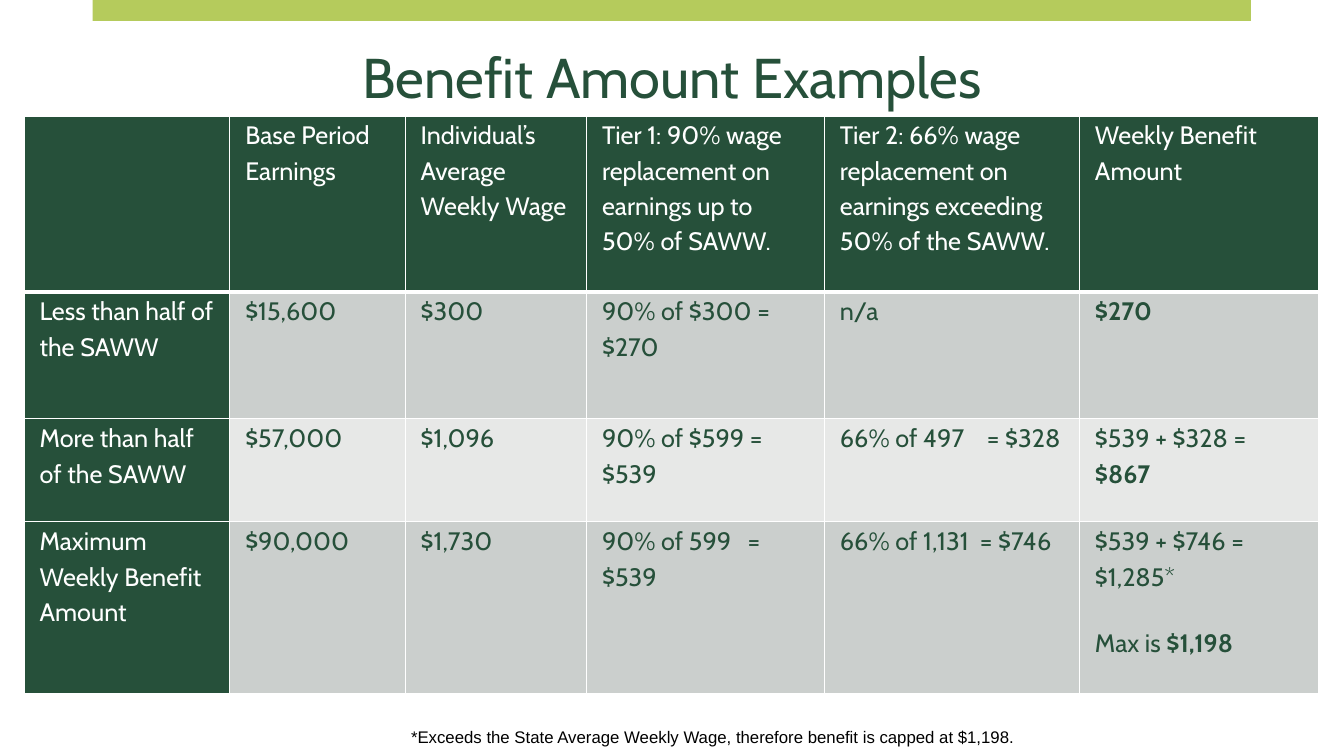
from lxml import etree
from pptx import Presentation
from pptx.dml.color import RGBColor
from pptx.enum import shapes, text
from pptx.oxml import ns
from pptx.util import Pt

GREEN = RGBColor(0x26, 0x50, 0x3A)
LIME = RGBColor(0xB5, 0xCB, 0x5C)
DARK_BAND = RGBColor(0xCB, 0xCF, 0xCD)
LIGHT_BAND = RGBColor(0xE7, 0xE8, 0xE7)
WHITE = RGBColor(0xFF, 0xFF, 0xFF)
BLACK = RGBColor(0, 0, 0)

COLUMN_WIDTHS = [146.9, 125.3, 129.6, 169.9, 182.2, 170.6]
ROW_HEIGHTS = [125.7, 90.7, 73.6, 122.9]
EQUALS_STOPS = {(2, 4): 105, (3, 3): 104, (3, 4): 100}
BENEFITS = [
    ["", "Base Period Earnings", "Individual’s Average Weekly Wage",
     "Tier 1: 90% wage replacement on earnings up to 50% of SAWW.",
     "Tier 2: 66% wage replacement on earnings exceeding 50% of the SAWW.",
     "Weekly Benefit Amount"],
    ["Less than half of the SAWW", "$15,600", "$300", "90% of $300 = $270",
     "n/a", "**$270"],
    ["More than half of the SAWW", "$57,000", "$1,096", "90% of $599 = $539",
     "66% of 497\t= $328", "$539 + $328 = **$867"],
    ["Maximum Weekly Benefit Amount", "$90,000", "$1,730",
     "90% of 599\t= $539", "66% of 1,131\t= $746",
     "$539 + $746 = $1,285*\nMax is **$1,198"],
]


def apply(target, values):
    """Set every attribute in a dict of format values."""
    for name, value in values.items():
        setattr(target, name, value)


def write_spans(para, content, color, font):
    """Write text in which a double asterisk switches to bold."""
    for index, piece in enumerate(content.split("**")):
        if piece:
            span = para.add_run()
            span.text = piece
            apply(span.font, {"bold": index == 1, **font})
            span.font.color.rgb = color


def add_text(page, bounds, content, color, font, frame_format, para_format):
    """Add a one-paragraph text box."""
    frame = page.shapes.add_textbox(*map(Pt, bounds)).text_frame
    apply(frame, {"word_wrap": True, **frame_format})
    para = frame.paragraphs[0]
    apply(para, para_format)
    write_spans(para, content, color, font)


def add_bar(page, bounds, color):
    """Add a plain filled bar."""
    bar = page.shapes.add_shape(shapes.MSO_SHAPE.RECTANGLE, *map(Pt, bounds))
    bar.shadow.inherit = False
    bar.fill.solid()
    bar.fill.fore_color.rgb = color
    bar.line.fill.background()


def add_tab_stop(para, position):
    """Give a paragraph one left tab stop."""
    stops = etree.SubElement(para._p.get_or_add_pPr(), ns.qn("a:tabLst"))
    etree.SubElement(stops, ns.qn("a:tab"), pos=str(Pt(position)), algn="l")


def set_borders(cell, widths):
    """Draw white borders given as left, right, top and bottom widths."""
    properties = cell._tc.get_or_add_tcPr()
    for index, (side, width) in enumerate(zip("LRTB", widths)):
        line = etree.Element(ns.qn(f"a:ln{side}"), w=str(Pt(width)))
        fill = etree.SubElement(line, ns.qn("a:solidFill"))
        etree.SubElement(fill, ns.qn("a:srgbClr"), val=str(WHITE))
        properties.insert(index, line)


def fill_cell(cell, row, column, content):
    """Fill, border and write one table cell."""
    heading = row == 0 or column == 0
    band = DARK_BAND if row % 2 else LIGHT_BAND
    apply(cell, {"margin_left": Pt(11), "margin_right": Pt(11),
                 "margin_top": 0, "margin_bottom": 0})
    cell.fill.solid()
    cell.fill.fore_color.rgb = GREEN if heading else band
    set_borders(cell, [1, 1, 3 if row == 1 else 1, 3 if row == 0 else 1])
    for index, line in enumerate(content.split("\n")):
        frame = cell.text_frame
        para = frame.add_paragraph() if index else frame.paragraphs[0]
        para.line_spacing = 1.15
        if index:
            para.space_before = Pt(22)
        if (row, column) in EQUALS_STOPS:
            add_tab_stop(para, EQUALS_STOPS[row, column])
        write_spans(para, line, WHITE if heading else GREEN,
                    {"name": "Cabin", "size": Pt(18)})


def add_benefit_table(page, left, top):
    """Add the table of benefit examples."""
    size = sum(COLUMN_WIDTHS), sum(ROW_HEIGHTS)
    table = page.shapes.add_table(len(ROW_HEIGHTS), len(COLUMN_WIDTHS),
                                  *map(Pt, (left, top, *size))).table
    apply(table, {"first_col": True, "horz_banding": False})
    for column, width in zip(table.columns, COLUMN_WIDTHS):
        column.width = Pt(width)
    for row, height in zip(table.rows, ROW_HEIGHTS):
        row.height = Pt(height)
    for row, contents in enumerate(BENEFITS):
        for column, content in enumerate(contents):
            fill_cell(table.cell(row, column), row, column, content)


def main():
    """Build the benefit examples slide."""
    deck = Presentation()
    apply(deck, {"slide_width": Pt(960), "slide_height": Pt(540)})
    page = deck.slides.add_slide(deck.slide_layouts[6])
    add_text(page, (66.2, 15, 827.3, 85), "Benefit Amount Examples", GREEN,
             {"name": "Cabin", "size": Pt(40)},
             {"vertical_anchor": text.MSO_ANCHOR.MIDDLE},
             {"alignment": text.PP_ALIGN.CENTER, "line_spacing": 0.9})
    add_bar(page, (66.2, 0, 827.3, 15), LIME)
    add_benefit_table(page, 17.3, 82.8)
    add_text(page, (286.5, 515.5, 574, 21.6),
             "*Exceeds the State Average Weekly Wage, "
             "therefore benefit is capped at $1,198.", BLACK,
             {"name": "Arial", "size": Pt(12)},
             {"auto_size": text.MSO_AUTO_SIZE.SHAPE_TO_FIT_TEXT}, {})
    deck.save("out.pptx")


if __name__ == "__main__":
    main()
